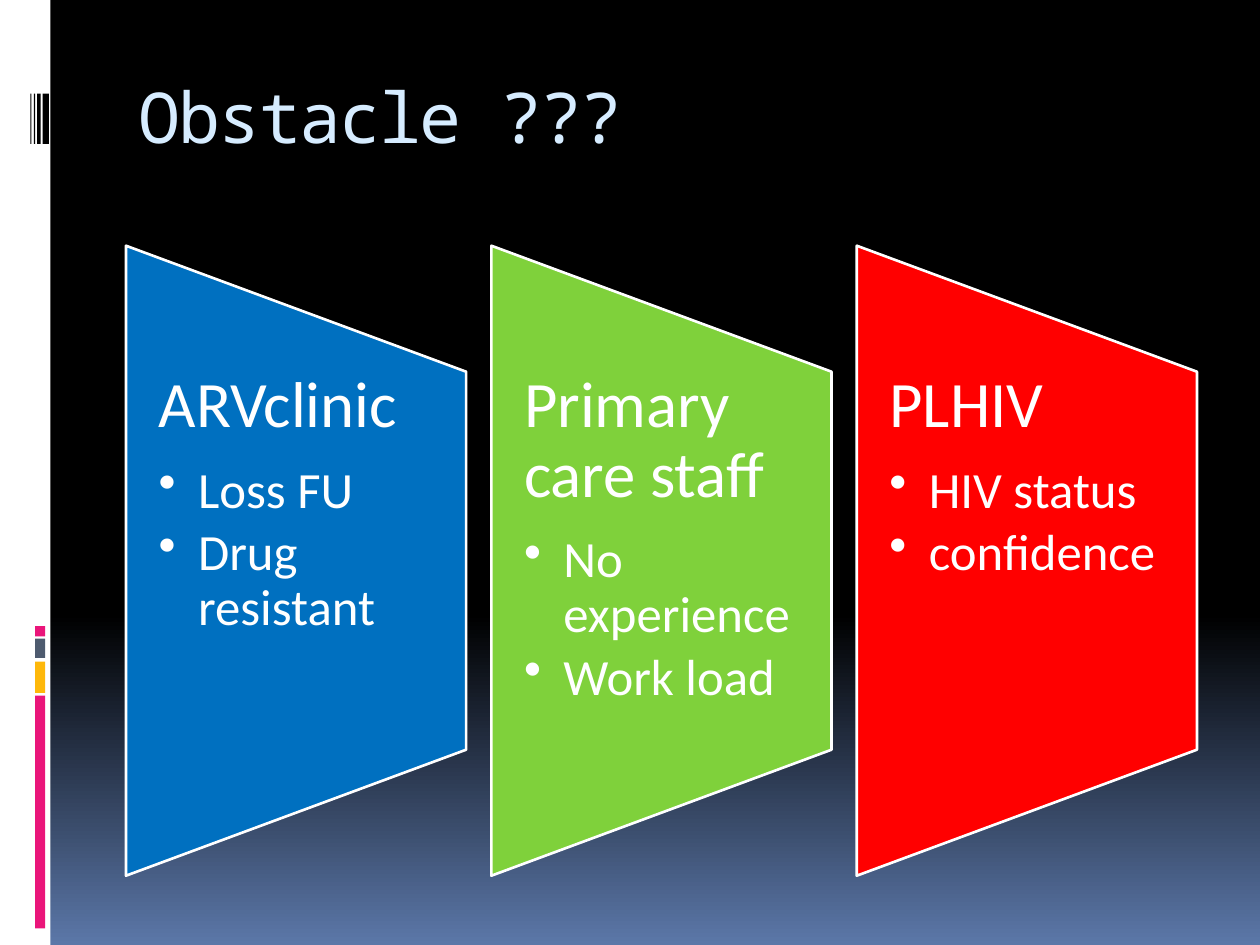
from copy import deepcopy

from lxml import etree
from pptx import Presentation
from pptx import util as u
from pptx.dml.color import RGBColor
from pptx.enum import shapes, text
from pptx.oxml.ns import qn

WHITE, BLACK, PINK = "FFFFFF", "000000", "EA157A"


def color(value):
    return RGBColor.from_string(value)


class SlideBuilder:
    heading_font = "Noto Sans Mono"
    body_font = "Calibri"

    def __init__(self, slide):
        self.slide = slide

    def background(self, start, end, hold, angle):
        fill = self.slide.background.fill
        fill.gradient()
        fill.gradient_angle = angle
        first, last = fill.gradient_stops
        first.color.rgb, first.position = color(start), 0
        last.color.rgb, last.position = color(end), 1
        stops = self.slide.background._cSld.find(".//" + qn("a:gsLst"))
        middle = deepcopy(stops[0])
        middle.set("pos", str(hold * 1000))
        stops.insert(1, middle)

    def shape(self, kind, bounds, fill, line=None, rotation=0):
        shape = self.slide.shapes.add_shape(kind, *map(u.Pt, bounds))
        shape.shadow.inherit = False
        shape.fill.solid()
        shape.fill.fore_color.rgb = color(fill)
        shape.rotation = rotation
        if line:
            shape.line.color.rgb = color(line)
            shape.line.width = u.Pt(1.5)
        else:
            shape.line.fill.background()

    def bar(self, left, top, width, height, fill):
        self.shape(shapes.MSO_SHAPE.RECTANGLE, (left, top, width, height), fill)

    def text_box(self, bounds, side_inset, top_inset=0):
        box = self.slide.shapes.add_textbox(*map(u.Pt, bounds))
        frame = box.text_frame
        frame.word_wrap = True
        frame.vertical_anchor = text.MSO_ANCHOR.TOP
        frame.margin_left = frame.margin_right = u.Pt(side_inset)
        frame.margin_top, frame.margin_bottom = u.Pt(top_inset), 0
        return frame

    def span(self, para, words, size, font, fill):
        span = para.add_run()
        span.text = words
        span.font.size = u.Pt(size)
        span.font.name = font
        span.font.color.rgb = color(fill)
        return span

    def title(self, words, bounds):
        frame = self.text_box(bounds, 7.2, 1.5)
        span = self.span(frame.paragraphs[0], words, 40, self.heading_font, "D6ECFF")
        span.font._element.set("spc", "-100")

    def bullet(self, para, indent):
        para.level = 1
        props = para._p.get_or_add_pPr()
        props.set("marL", str(u.Pt(indent)))
        props.set("indent", str(-u.Pt(indent)))
        etree.SubElement(props, qn("a:buChar")).set("char", "•")

    def panel(self, left, top, width, height, fill, heading, points):
        turned = (left + (width - height) / 2, top + (height - width) / 2, height, width)
        self.shape(shapes.MSO_SHAPE.FLOWCHART_MANUAL_OPERATION, turned, fill, WHITE, 270)
        frame = self.text_box((left, top + height / 5, width, height * 3 / 5), 18.72)
        for index, words in enumerate([heading, *points]):
            para = frame.add_paragraph() if index else frame.paragraphs[0]
            size, share = (29, 0.15) if index else (37, 0.35)
            para.line_spacing = 0.9
            para.space_after = u.Pt(round(size * share, 2))
            if index:
                self.bullet(para, 22.5)
            self.span(para, words, size, self.body_font, WHITE)


def main():
    deck = Presentation()
    deck.slide_width, deck.slide_height = u.Pt(720), u.Pt(540)
    page = SlideBuilder(deck.slides.add_slide(deck.slide_layouts[6]))
    page.background(BLACK, "5B77A8", 65, 270)

    page.bar(0, 0, 28.8, 540, WHITE)
    color_bars = [(397.5, 133, PINK), (378, 18, "FEB80A"),
                  (365, 11, "4E5B6F"), (357.8, 5.8, PINK)]
    for top, height, fill in color_bars:
        page.bar(20, top, 5.8, height, fill)
    for left, width in [(24.3, 3.6), (21.2, 2), (19.4, 0.8), (17.4, 0.6)]:
        page.bar(left, 53.5, width, 28.8, BLACK)

    page.title("Obstacle ???", (72, 40.3, 612, 72))

    panels = [
        ("0070C0", "ARVclinic", ["Loss FU", "Drug resistant"]),
        ("7FD13B", "Primary care staff", ["No experience", "Work load"]),
        ("FF0000", "PLHIV", ["HIV status", "confidence"]),
    ]
    width, gap = 194.4, 14.4
    for column, (fill, heading, points) in enumerate(panels):
        page.panel(72 + column * (width + gap), 140.4, width, 360, fill, heading, points)

    deck.save("out.pptx")


if __name__ == "__main__":
    main()
